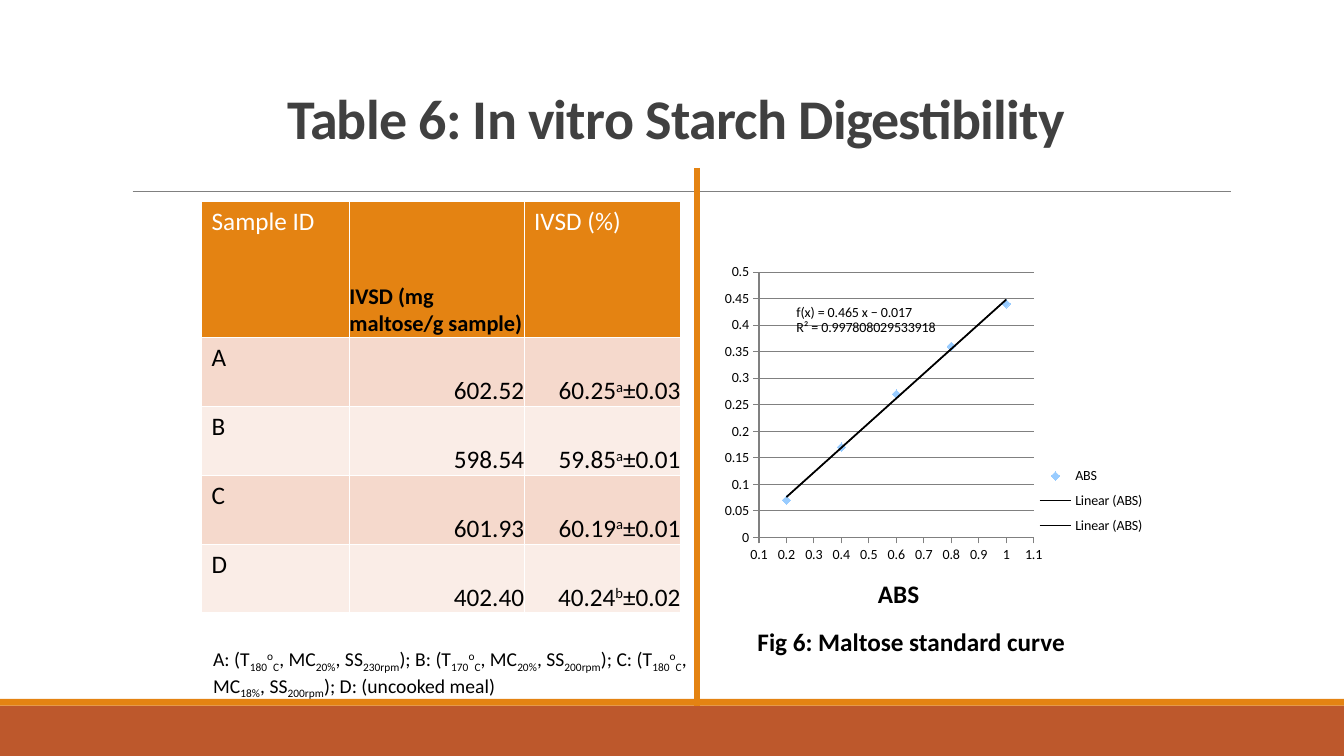
import pptx
import pptx.chart.data
import pptx.dml.color
import pptx.enum.chart
import pptx.enum.shapes
import pptx.enum.text
import pptx.oxml
import pptx.oxml.ns
import pptx.util
from dataclasses import dataclass


@dataclass(frozen=True)
class Theme:
    font: str = "Calibri"
    orange: str = "E48312"
    rust: str = "BD582C"
    gray: str = "808080"
    title: str = "404040"
    black: str = "000000"
    white: str = "FFFFFF"
    marker: str = "99CCFF"
    bands: tuple = ("F5D9CC", "FAEDE7")
    title_size: int = 40
    body_size: int = 18
    header_size: int = 16
    note_size: int = 14
    chart_size: int = 10


theme = Theme()
color = pptx.dml.color.RGBColor.from_string
qn = pptx.oxml.ns.qn
CELL = pptx.util.Inches(1 / 60)  # the slide is a grid of 800 by 450 cells
COLUMNS, ROWS = 800, 450


def write_runs(paragraph, text, size, ink=theme.black, bold=False):
    """Split text at | into runs; a leading ^ raises a run and _ lowers it."""
    for part in text.split("|"):
        run = paragraph.add_run()
        run.text = part.lstrip("^_")
        run.font.name = theme.font
        run.font.size = pptx.util.Pt(size)
        run.font.bold = bold
        run.font.color.rgb = color(ink)
        if part[0] in "^_":
            run.font._element.set("baseline", "30000" if part[0] == "^" else "-25000")


def place_in_chart(element, successor, **shares):
    """Give a chart part a manual layout in shares of the chart area."""
    for existing in element.findall(qn("c:layout")):
        element.remove(existing)
    settings = {"xMode": "edge", "yMode": "edge", **shares}
    inner = "".join(f'<c:{name} val="{value}"/>' for name, value in settings.items())
    layout = pptx.oxml.parse_xml(
        f'<c:layout {pptx.oxml.ns.nsdecls("c")}><c:manualLayout>{inner}</c:manualLayout></c:layout>')
    element.find(qn(successor)).addprevious(layout)


presentation = pptx.Presentation()
presentation.slide_width = COLUMNS * CELL
presentation.slide_height = ROWS * CELL
slide = presentation.slides.add_slide(presentation.slide_layouts[5])
shapes = slide.shapes

# Title
title = shapes.title
title.left, title.top, title.width, title.height = (n * CELL for n in (165, 18, 521, 75))
frame = title.text_frame
frame.auto_size = pptx.enum.text.MSO_AUTO_SIZE.NONE
frame.vertical_anchor = pptx.enum.text.MSO_ANCHOR.BOTTOM
paragraph = frame.paragraphs[0]
paragraph.alignment = pptx.enum.text.PP_ALIGN.LEFT
paragraph.line_spacing = 0.85
write_runs(paragraph, "Table 6: In vitro Starch Digestibility", theme.title_size, theme.title, True)
paragraph.runs[0].font._element.set("spc", "-50")

# Footer bands
for top, bottom, fill in ((420, ROWS, theme.rust), (416, 420, theme.orange)):
    band = shapes.add_shape(pptx.enum.shapes.MSO_SHAPE.RECTANGLE,
                            0, top * CELL, COLUMNS * CELL, (bottom - top) * CELL)
    band.shadow.inherit = False
    band.fill.solid()
    band.fill.fore_color.rgb = color(fill)
    band.line.fill.background()

# Rule under the title and divider between table and chart
for ends, ink, width in (((79, 114, 733, 114), theme.gray, 0.5),
                         ((415, 100, 415, 420), theme.orange, 4.5)):
    line = shapes.add_connector(pptx.enum.shapes.MSO_CONNECTOR.STRAIGHT, *(n * CELL for n in ends))
    line.line.color.rgb = color(ink)
    line.line.width = pptx.util.Pt(width)
    line._element.spPr.append(pptx.oxml.parse_xml(f'<a:effectLst {pptx.oxml.ns.nsdecls("a")}/>'))

# Digestibility table
records = (
    ("Sample ID", "IVSD (mg maltose/g sample)", "IVSD (%)"),
    ("A", "602.52", "60.25|^a|±0.03"),
    ("B", "598.54", "59.85|^a|±0.01"),
    ("C", "601.93", "60.19|^a|±0.01"),
    ("D", "402.40", "40.24|^b|±0.02"),
)
column_widths = (88, 104, 93)
row_heights = (81, 41, 41, 41, 41)
table = shapes.add_table(len(records), len(column_widths), 120 * CELL, 120 * CELL,
                         sum(column_widths) * CELL, sum(row_heights) * CELL).table
for column, width in zip(table.columns, column_widths):
    column.width = width * CELL
for row_index, (record, height) in enumerate(zip(records, row_heights)):
    table.rows[row_index].height = height * CELL
    header = row_index == 0
    for column_index, text in enumerate(record):
        cell = table.cell(row_index, column_index)
        cell.fill.solid()
        cell.fill.fore_color.rgb = color(theme.orange if header else theme.bands[(row_index - 1) % 2])
        unit_header = header and column_index == 1
        paragraph = cell.text_frame.paragraphs[0]
        if unit_header or (not header and column_index > 0):
            cell.vertical_anchor = pptx.enum.text.MSO_ANCHOR.BOTTOM
            cell.margin_left = cell.margin_right = cell.margin_top = cell.margin_bottom = 0
            if not header:
                paragraph.alignment = pptx.enum.text.PP_ALIGN.RIGHT
        write_runs(paragraph, text, theme.header_size if unit_header else theme.body_size,
                   theme.white if header and not unit_header else theme.black, unit_header)

# Maltose standard curve
chart_data = pptx.chart.data.XyChartData()
absorbance = chart_data.add_series("ABS")
for concentration, reading in zip((0.2, 0.4, 0.6, 0.8, 1), (0.07, 0.17, 0.27, 0.36, 0.44)):
    absorbance.add_data_point(concentration, reading)
chart = shapes.add_chart(pptx.enum.chart.XL_CHART_TYPE.XY_SCATTER, 425 * CELL, 127 * CELL,
                         260 * CELL, 248 * CELL, chart_data).chart
chart.font.name = theme.font
chart.font.size = pptx.util.Pt(theme.chart_size)
chart.font.color.rgb = color(theme.black)
chart.has_title = True
write_runs(chart.chart_title.text_frame.paragraphs[0], "ABS", theme.body_size, bold=True)
place_in_chart(chart.chart_title._element, "c:overlay", x=0.365, y=0.86)
chart.has_legend = True
chart.legend.position = pptx.enum.chart.XL_LEGEND_POSITION.RIGHT
chart.legend.include_in_layout = False
place_in_chart(chart.legend._element, "c:overlay", x=0.755, y=0.59, w=0.25, h=0.2)
plot_area = chart._chartSpace.chart.plotArea
place_in_chart(plot_area, "c:scatterChart", x=0.103, y=0.141, w=0.629, h=0.637)
target = pptx.oxml.parse_xml(f'<c:layoutTarget {pptx.oxml.ns.nsdecls("c")} val="inner"/>')
plot_area.find(qn("c:layout"))[0].insert(0, target)

for axis, low, high, step, has_grid in ((chart.category_axis, 0.1, 1.1, 0.1, False),
                                        (chart.value_axis, 0, 0.5, 0.05, True)):
    axis.minimum_scale, axis.maximum_scale, axis.major_unit = low, high, step
    axis.has_major_gridlines = has_grid
    axis.major_tick_mark = pptx.enum.chart.XL_TICK_MARK.OUTSIDE
    axis.minor_tick_mark = pptx.enum.chart.XL_TICK_MARK.NONE
    axis.tick_labels.number_format = "General"
    axis.tick_labels.number_format_is_linked = False
    axis.format.line.color.rgb = color(theme.gray)
gridlines = chart.value_axis.major_gridlines.format.line
gridlines.color.rgb = color(theme.gray)
gridlines.width = pptx.util.Pt(0.75)

chart.plots[0].vary_by_categories = False
series = chart.plots[0].series[0]
series.format.line.fill.background()
series.marker.style = pptx.enum.chart.XL_MARKER_STYLE.DIAMOND
series.marker.size = 6
series.marker.format.fill.solid()
series.marker.format.fill.fore_color.rgb = color(theme.marker)
series.marker.format.line.fill.background()
series._element.get_or_add_smooth().val = False
for width, show_equation in ((0.75, 0), (1.25, 1)):
    label = '<c:trendlineLbl><c:numFmt formatCode="General" sourceLinked="0"/></c:trendlineLbl>'
    trendline = pptx.oxml.parse_xml(
        f'<c:trendline {pptx.oxml.ns.nsdecls("c", "a")}><c:spPr><a:ln w="{pptx.util.Pt(width)}">'
        f'<a:solidFill><a:srgbClr val="{theme.black}"/></a:solidFill></a:ln></c:spPr>'
        f'<c:trendlineType val="linear"/><c:dispRSqr val="{show_equation}"/>'
        f'<c:dispEq val="{show_equation}"/>{label if show_equation else ""}</c:trendline>')
    series._element.find(qn("c:xVal")).addprevious(trendline)
    if show_equation:
        place_in_chart(trendline.find(qn("c:trendlineLbl")), "c:numFmt", x=0.19, y=0.21)

# Figure caption and sample key
sample_key = ("A: (T|_180|^o|_C|, MC|_20%|, SS|_230rpm|); B: (T|_170|^o|_C|, MC|_20%|, SS|_200rpm|"
              "); C: (T|_180|^o|_C|, MC|_18%|, SS|_200rpm|); D: (uncooked meal)")
for area, text, size, bold in (
        ((445, 370, 240, 24), "Fig 6: Maltose standard curve", theme.body_size, True),
        ((121, 382, 305, 53), sample_key, theme.note_size, False)):
    text_box = shapes.add_textbox(*(n * CELL for n in area))
    text_box.text_frame.word_wrap = True
    write_runs(text_box.text_frame.paragraphs[0], text, size, bold=bold)

presentation.save("out.pptx")
